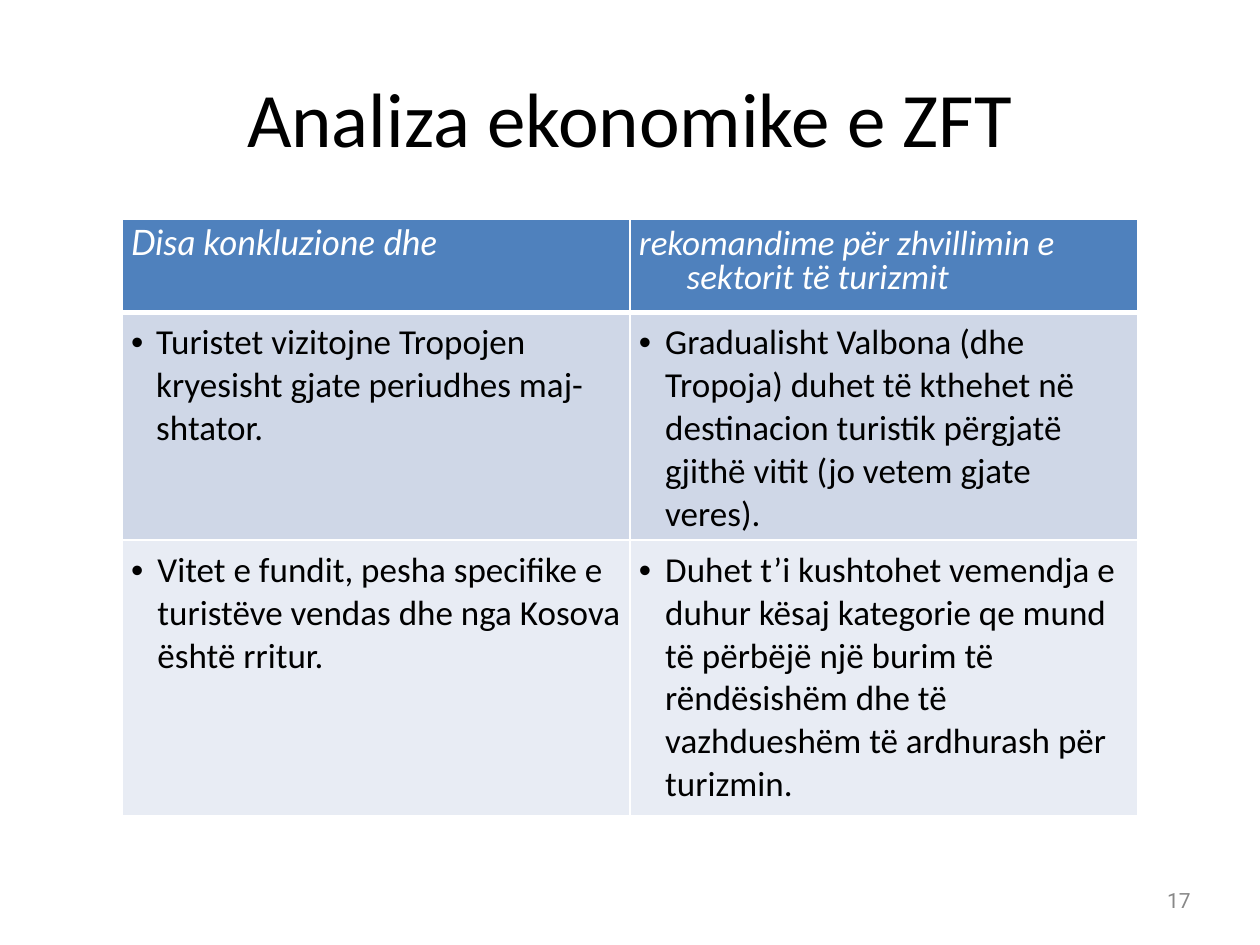
from dataclasses import dataclass

from lxml.etree import SubElement
from pptx import Presentation
from pptx.dml.color import RGBColor
from pptx.enum.text import MSO_ANCHOR, PP_ALIGN
from pptx.oxml.ns import qn
from pptx.util import Inches, Pt

COLORS = {
    "text": "000000",
    "number": "888888",
    "white": "FFFFFF",
    "header": "4F81BD",
    "band_dark": "CFD7E7",
    "band_light": "E8ECF4",
}


@dataclass
class CellText:
    text: str
    indent: float = 0.21
    space_before: float = 4
    font: str = "Calibri"


@dataclass
class Row:
    height: float
    fill: str
    cells: tuple[CellText, CellText]
    header: bool = False


ROWS = [
    Row(0.74, "header", (
        CellText("Disa konkluzione dhe", 0.38, 0, "Lato"),
        CellText("rekomandime për zhvillimin e sektorit të turizmit", 0.38),
    ), header=True),
    Row(1.77, "band_dark", (
        CellText("Turistet vizitojne Tropojen kryesisht gjate periudhes "
                 "maj-shtator.", 0.2, 0),
        CellText("Gradualisht Valbona (dhe Tropoja) duhet të kthehet në "
                 "destinacion turistik përgjatë gjithë vitit "
                 "(jo vetem gjate veres)."),
    )),
    Row(2.19, "band_light", (
        CellText("Vitet e fundit, pesha specifike e turistëve vendas dhe "
                 "nga Kosova është rritur."),
        CellText("Duhet t’i kushtohet vemendja e duhur kësaj kategorie qe "
                 "mund të përbëjë një burim të rëndësishëm dhe të "
                 "vazhdueshëm të ardhurash për turizmin."),
    )),
]
COL_WIDTH = 4.03


def style_font(font, name: str, size: float, color: str) -> None:
    font.name = name
    font.size = Pt(size)
    font.color.rgb = RGBColor.from_string(COLORS[color])


def add_text(s, box: tuple, text: str, font: str, size: float, color: str,
             align: PP_ALIGN) -> None:
    tf = s.shapes.add_textbox(*map(Inches, box)).text_frame
    tf.word_wrap = True
    tf.vertical_anchor = MSO_ANCHOR.MIDDLE
    tf.margin_left = tf.margin_right = Inches(0.05)
    tf.margin_top = tf.margin_bottom = Inches(0.05)
    p = tf.paragraphs[0]
    p.text = text
    p.alignment = align
    style_font(p.runs[0].font, font, size, color)


def set_borders(cell, bottom: float) -> None:
    """Draw white cell borders; must run before the cell gets its fill."""
    tc_pr = cell._tc.get_or_add_tcPr()
    for tag, width in (("lnL", 1), ("lnR", 1), ("lnT", 1), ("lnB", bottom)):
        ln = SubElement(tc_pr, qn(f"a:{tag}"), w=str(Pt(width)))
        fill = SubElement(ln, qn("a:solidFill"))
        SubElement(fill, qn("a:srgbClr"), val=COLORS["white"])


def fill_cell(cell, content: CellText, row: Row) -> None:
    set_borders(cell, 3 if row.header else 1)
    cell.fill.solid()
    cell.fill.fore_color.rgb = RGBColor.from_string(COLORS[row.fill])
    cell.margin_left = cell.margin_right = Inches(0.07)
    cell.margin_top = cell.margin_bottom = Inches(0.07)

    p = cell.text_frame.paragraphs[0]
    p.text = content.text
    p.space_before = Pt(content.space_before)
    font = p.runs[0].font
    style_font(font, content.font, 20, "white" if row.header else "text")
    font.bold = False
    font.italic = row.header

    p_pr = p._p.get_or_add_pPr()
    p_pr.set("marL", str(Inches(content.indent)))
    p_pr.set("indent", str(-Inches(content.indent)))
    if row.header:
        p.line_spacing = 0.8
    else:
        SubElement(p_pr, qn("a:buFont"), typeface="Arial")
        SubElement(p_pr, qn("a:buChar"), char="•")


def add_findings_table(s, left: float, top: float) -> None:
    height = sum(row.height for row in ROWS)
    table = s.shapes.add_table(len(ROWS), 2, Inches(left), Inches(top),
                               Inches(2 * COL_WIDTH), Inches(height)).table
    for col in table.columns:
        col.width = Inches(COL_WIDTH)
    for i, row in enumerate(ROWS):
        table.rows[i].height = Inches(row.height)
        for j, content in enumerate(row.cells):
            fill_cell(table.cell(i, j), content, row)


def main() -> None:
    prs = Presentation()
    prs.slide_width, prs.slide_height = Inches(10), Inches(7.5)
    s = prs.slides.add_slide(prs.slide_layouts[6])
    add_text(s, (0.5, 0.1, 9, 1.65), "Analiza ekonomike e ZFT",
             "Calibri", 44, "text", PP_ALIGN.CENTER)
    add_text(s, (7.17, 7, 2.33, 0.29), "17",
             "Roboto", 12, "number", PP_ALIGN.RIGHT)
    add_findings_table(s, 0.97, 1.74)
    prs.save("out.pptx")


if __name__ == "__main__":
    main()
